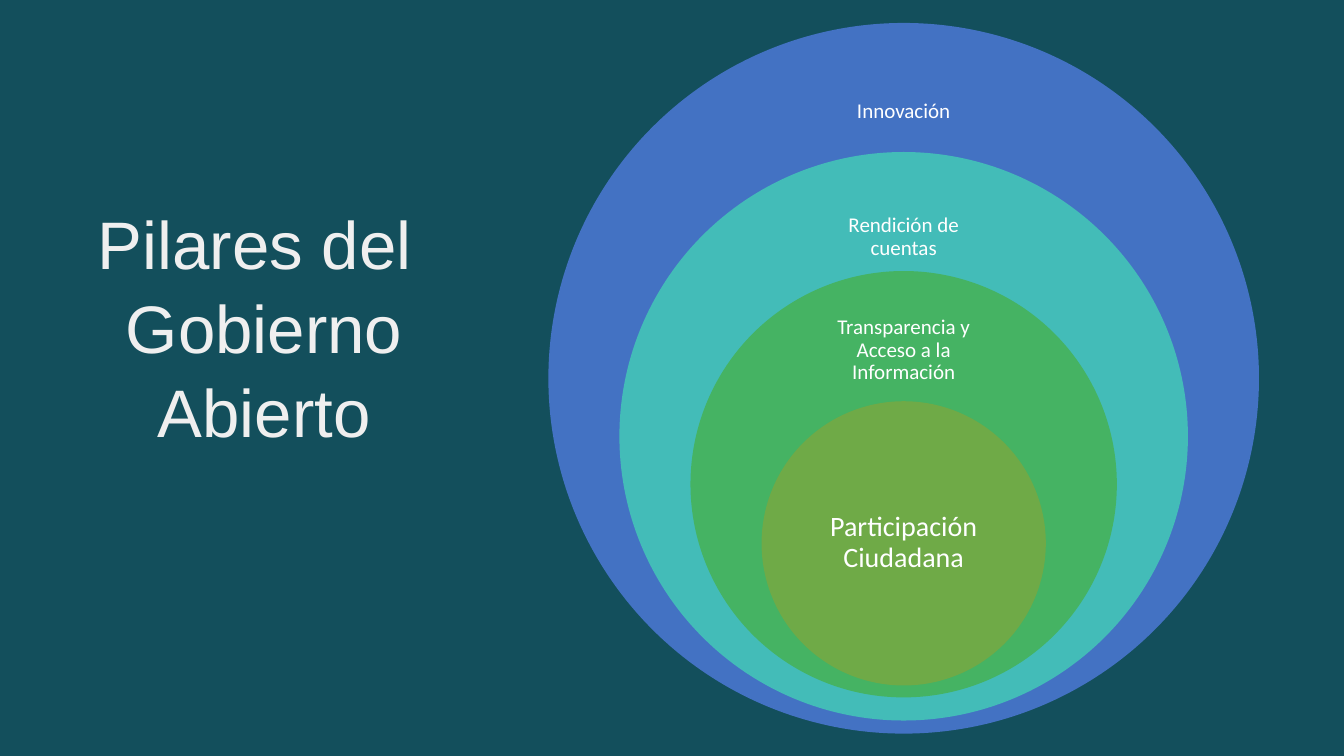
from dataclasses import dataclass

from pptx import Presentation
from pptx import util as u
from pptx.dml.color import RGBColor
from pptx.enum import shapes, text
from pptx.slide import Slide


@dataclass(frozen=True)
class Theme:
    background: str = "134F5C"
    title: str = "EFEFEF"
    label: str = "FFFFFF"
    title_font: str = "Arial"
    label_font: str = "Calibri"
    title_size: float = 48
    label_size: float = 15
    core_size: float = 20


@dataclass(frozen=True)
class Pillar:
    name: str
    fill: str
    top: float
    label_top: float
    label_height: float
    size: float = Theme.label_size
    inset: float = 8.4


THEME = Theme()
CENTER_X = 645.5
OUTER_DIAMETER = 507.6
DIAMETER_STEP = OUTER_DIAMETER / 5
LABEL_WIDTH = 142

PILLARS = [
    Pillar("Innovación", "4372C3", 16.4, 41.8, 76.2),
    Pillar("Rendición de cuentas", "43BCB8", 108.6, 133.2, 72.7),
    Pillar("Transparencia y Acceso a la Información", "45B363", 193.6, 216, 68.4),
    Pillar("Participación Ciudadana", "6FAA47", 286.6, 337, 101.5,
           size=THEME.core_size, inset=11.2),
]
# The space after the first line shifts it slightly left of centre.
TITLE_LINES = ["Pilares del ", "Gobierno", "Abierto"]


def add_text(s: Slide, lines: list[str], left: float, top: float, width: float,
             height: float, *, font: str, size: float, color: str,
             spacing: float, anchor: text.MSO_ANCHOR,
             inset_x: float, inset_y: float) -> None:
    """Add a wrapped, centred text box with one paragraph per line."""
    sp = s.shapes.add_textbox(u.Pt(left), u.Pt(top), u.Pt(width), u.Pt(height))
    tf = sp.text_frame
    tf.word_wrap = True
    tf.vertical_anchor = anchor
    tf.margin_left = tf.margin_right = u.Pt(inset_x)
    tf.margin_top = tf.margin_bottom = u.Pt(inset_y)
    for i, line in enumerate(lines):
        p = tf.add_paragraph() if i else tf.paragraphs[0]
        p.alignment = text.PP_ALIGN.CENTER
        p.line_spacing = spacing
        r = p.add_run()
        r.text = line
        r.font.name = font
        r.font.size = u.Pt(size)
        r.font.color.rgb = RGBColor.from_string(color)


def add_pillar(s: Slide, pillar: Pillar, diameter: float) -> None:
    sp = s.shapes.add_shape(
        shapes.MSO_SHAPE.OVAL, u.Pt(CENTER_X - diameter / 2), u.Pt(pillar.top),
        u.Pt(diameter), u.Pt(diameter))
    sp.shadow.inherit = False
    sp.fill.solid()
    sp.fill.fore_color.rgb = RGBColor.from_string(pillar.fill)
    sp.line.fill.background()
    add_text(s, [pillar.name], CENTER_X - LABEL_WIDTH / 2, pillar.label_top,
             LABEL_WIDTH, pillar.label_height, font=THEME.label_font,
             size=pillar.size, color=THEME.label, spacing=0.9,
             anchor=text.MSO_ANCHOR.MIDDLE,
             inset_x=pillar.inset, inset_y=pillar.inset)


def main() -> None:
    prs = Presentation()
    prs.slide_width, prs.slide_height = u.Pt(960), u.Pt(540)
    s = prs.slides.add_slide(prs.slide_layouts[6])
    s.background.fill.solid()
    s.background.fill.fore_color.rgb = RGBColor.from_string(THEME.background)
    for i, pillar in enumerate(PILLARS):
        add_pillar(s, pillar, OUTER_DIAMETER - i * DIAMETER_STEP)
    add_text(s, TITLE_LINES, 49.7, 139, 278, 194.4, font=THEME.title_font,
             size=THEME.title_size, color=THEME.title, spacing=1.04,
             anchor=text.MSO_ANCHOR.TOP, inset_x=7.2, inset_y=3.6)
    prs.save("out.pptx")


if __name__ == "__main__":
    main()
